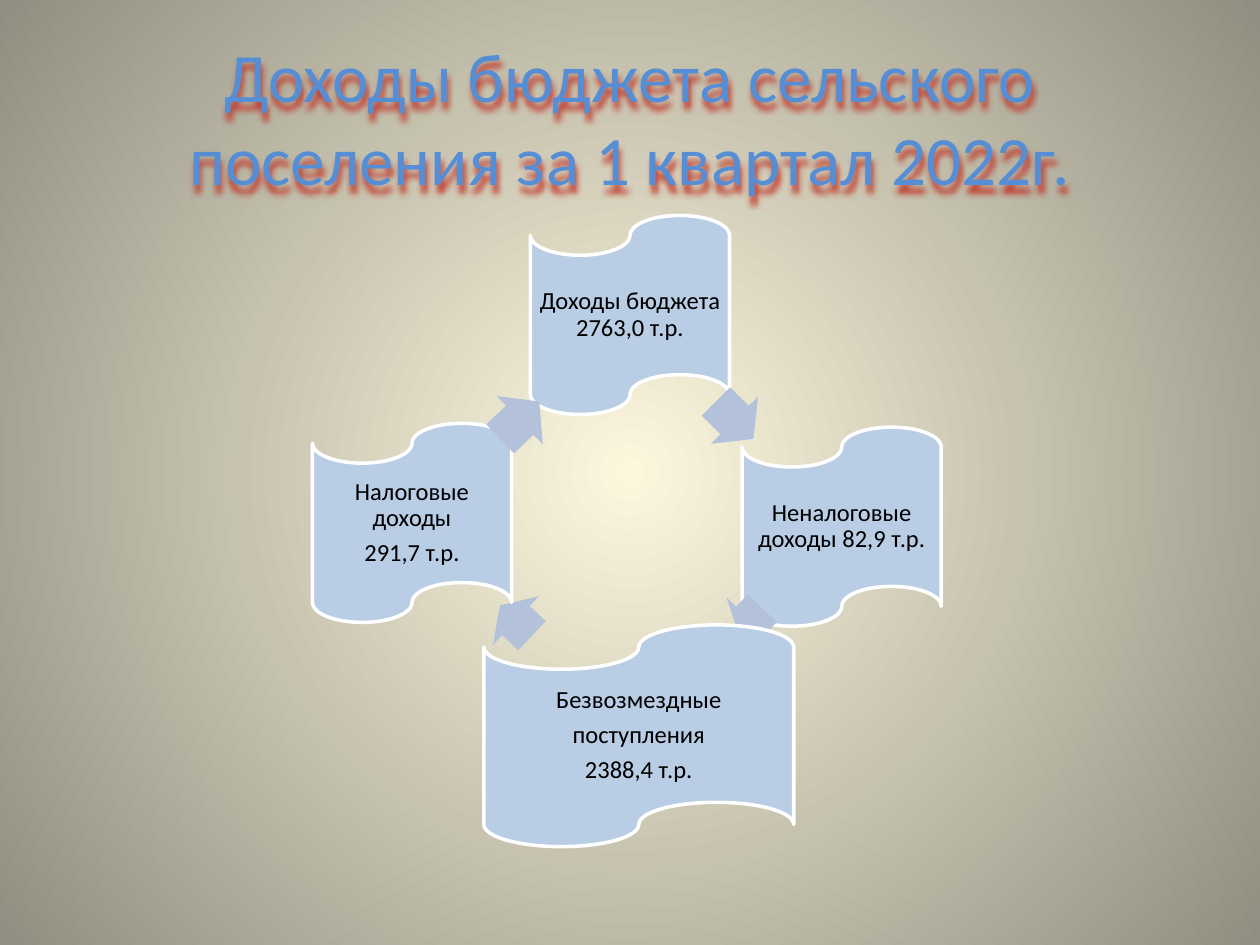
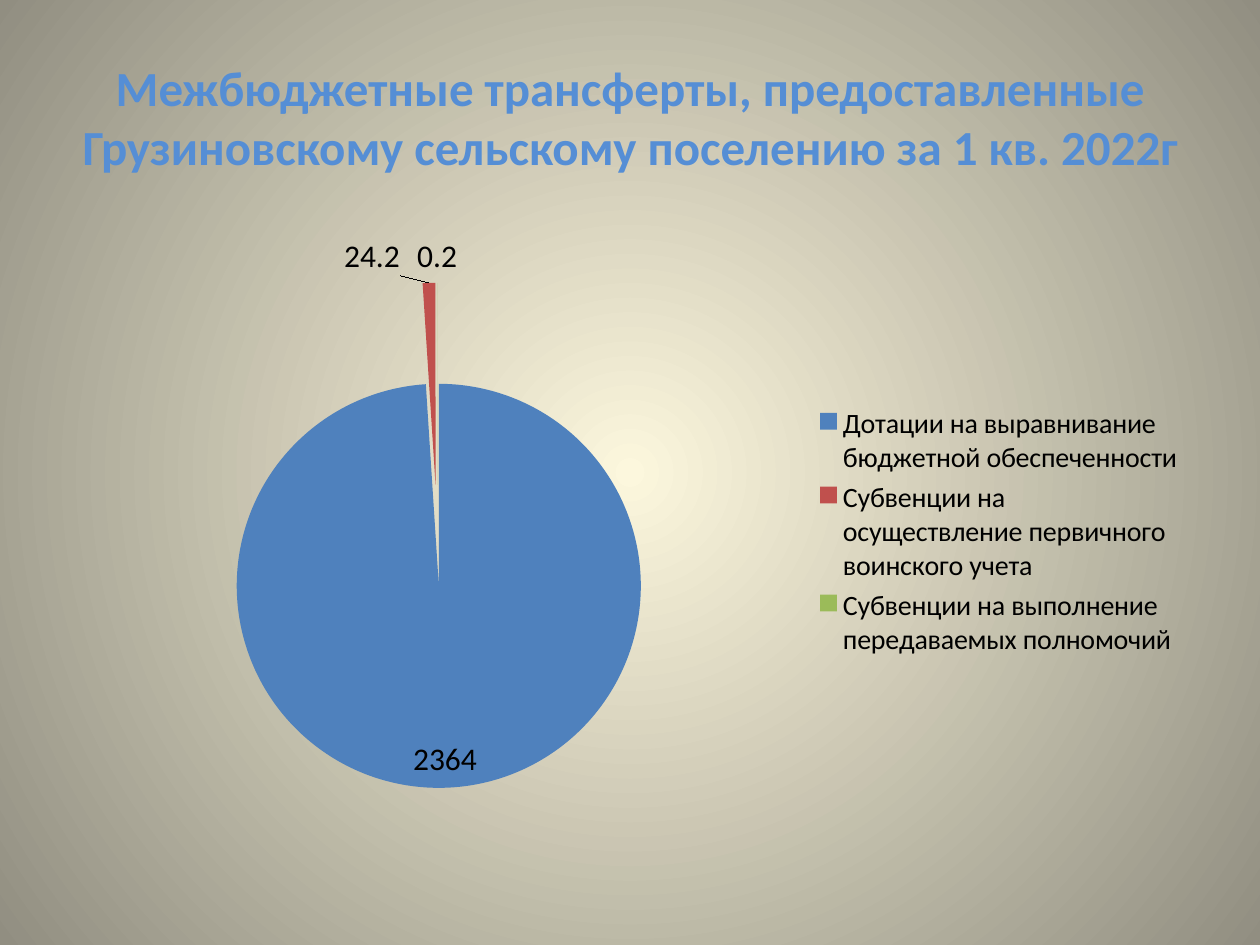
from dataclasses import dataclass

from pptx import Presentation
from pptx.chart.data import CategoryChartData
from pptx.dml.color import RGBColor
from pptx.enum.chart import XL_CHART_TYPE as ChartType
from pptx.enum.chart import XL_LABEL_POSITION as LabelPosition
from pptx.enum.chart import XL_LEGEND_POSITION as LegendPosition
from pptx.enum.shapes import MSO_SHAPE as Preset
from pptx.enum.text import MSO_ANCHOR as Anchor
from pptx.enum.text import MSO_AUTO_SIZE as AutoSize
from pptx.enum.text import PP_ALIGN as Align
from pptx.oxml import parse_xml
from pptx.oxml.ns import nsdecls, qn
from pptx.util import Pt

EMU_PER_PX = 9144
TITLE_ONLY = 5


@dataclass(frozen=True)
class Theme:
    font: str = "Calibri"
    glow_center: str = "FCF7DD"
    glow_edge: str = "918E81"
    title: str = "558ED5"
    title_shadow: str = "C0392B"
    text: str = "000000"
    tape: str = "B9CDE5"
    tape_line: str = "FFFFFF"
    arrow: str = "B3C1DB"
    slices: tuple = ("4F81BD", "C0504D", "9BBB59")
    title_size: float = 39.6
    long_title_size: float = 28
    tape_size: float = 14
    label_size: float = 18
    legend_size: float = 16


def px(value):
    return value * EMU_PER_PX


def rgb(value):
    return RGBColor.from_string(value)


def style_font(font, name, size, color, bold=False):
    font.name = name
    font.size = Pt(size)
    font.bold = bold
    font.color.rgb = rgb(color)


def write_text(frame, text, *, font, size, color, bold=False,
               line_spacing=None, space_after=None, inset=None):
    frame.word_wrap = True
    frame.auto_size = AutoSize.NONE
    frame.vertical_anchor = Anchor.MIDDLE
    if inset is not None:
        frame.margin_left = frame.margin_right = px(inset)
        frame.margin_top = frame.margin_bottom = px(inset)
    frame.text = text
    for paragraph in frame.paragraphs:
        paragraph.alignment = Align.CENTER
        paragraph.line_spacing = line_spacing
        paragraph.space_after = space_after
        for run in paragraph.runs:
            style_font(run.font, font, size, color, bold)


def manual_layout(**values):
    items = "".join(f'<c:{key} val="{value}"/>' for key, value in values.items())
    return parse_xml(f'<c:layout {nsdecls("c")}><c:manualLayout>{items}'
                     '</c:manualLayout></c:layout>')


class Deck:
    def __init__(self, theme):
        self.theme = theme
        self.presentation = Presentation()
        self.presentation.slide_width = px(1000)
        self.presentation.slide_height = px(750)
        self.slide = None
        self.paint_background()

    def paint_background(self):
        master = self.presentation.slide_master
        fill = master.background.fill
        fill.gradient()
        colors = (self.theme.glow_center, self.theme.glow_edge)
        for stop, color in zip(fill.gradient_stops, colors):
            stop.color.rgb = rgb(color)
        gradient = master.element.find(".//" + qn("p:bg")).find(".//" + qn("a:gradFill"))
        gradient.replace(gradient.find(qn("a:lin")), parse_xml(
            f'<a:path {nsdecls("a")} path="circle">'
            '<a:fillToRect l="50000" t="50000" r="50000" b="50000"/></a:path>'))

    def add_slide(self, title, size, bold=False, shadow=False):
        layout = self.presentation.slide_layouts[TITLE_ONLY]
        self.slide = self.presentation.slides.add_slide(layout)
        shape = self.slide.shapes.title
        shape.left, shape.top = px(50), px(30)
        shape.width, shape.height = px(900), px(125)
        write_text(shape.text_frame, title, font=self.theme.font, size=size,
                   color=self.theme.title, bold=bold)
        if shadow:
            shape.element.spPr.append(parse_xml(
                f'<a:effectLst {nsdecls("a")}>'
                '<a:outerShdw blurRad="50800" dist="50800" dir="5400000" rotWithShape="0">'
                f'<a:srgbClr val="{self.theme.title_shadow}"/>'
                '</a:outerShdw></a:effectLst>'))

    def shape(self, preset, box, fill):
        shape = self.slide.shapes.add_shape(preset, *map(px, box))
        shape.shadow.inherit = False
        shape.fill.solid()
        shape.fill.fore_color.rgb = rgb(fill)
        return shape

    def tape(self, box, text):
        shape = self.shape(Preset.FLOWCHART_PUNCHED_TAPE, box, self.theme.tape)
        shape.line.color.rgb = rgb(self.theme.tape_line)
        shape.line.width = Pt(2)
        write_text(shape.text_frame, text, font=self.theme.font,
                   size=self.theme.tape_size, color=self.theme.text,
                   line_spacing=0.9, space_after=Pt(4.9), inset=2)

    def arrow(self, box, rotation):
        shape = self.shape(Preset.RIGHT_ARROW, box, self.theme.arrow)
        shape.line.fill.background()
        shape.adjustments[0] = 0.6
        shape.adjustments[1] = 0.5
        shape.rotation = rotation

    def pie(self, box, name, values, explosion, label_shifts):
        data = CategoryChartData()
        data.categories = list(values)
        data.add_series(name, list(values.values()))
        chart = self.slide.shapes.add_chart(ChartType.PIE, *map(px, box), data).chart
        style_font(chart.font, self.theme.font, self.theme.label_size, self.theme.text)
        chart.has_title = False
        chart.has_legend = True
        chart.legend.position = LegendPosition.RIGHT
        chart.legend.include_in_layout = False
        style_font(chart.legend.font, self.theme.font, self.theme.legend_size,
                   self.theme.text)
        plot = chart.plots[0]
        plot.vary_by_categories = True

        plot_area = chart.element.find(".//" + qn("c:plotArea"))
        for layout in plot_area.findall(qn("c:layout")):
            plot_area.remove(layout)
        plot_area.insert(0, manual_layout(layoutTarget="inner", xMode="edge", yMode="edge",
                                          x=0.06, y=0.1, w=0.54, h=0.81))
        plot_area.find(".//" + qn("c:tx")).addnext(
            parse_xml(f'<c:explosion {nsdecls("c")} val="{explosion}"/>'))

        series = plot.series[0]
        for index, color in enumerate(self.theme.slices):
            fill = series.points[index].format.fill
            fill.solid()
            fill.fore_color.rgb = rgb(color)
        series.data_labels.show_value = True
        series.data_labels.position = LabelPosition.BEST_FIT
        for index, (x, y) in label_shifts.items():
            series.points[index].data_label.position = LabelPosition.BEST_FIT
            label = plot_area.find(".//" + qn("c:dLbl"))
            label.insert(1, manual_layout(x=x, y=y))

    def save(self):
        self.presentation.save("out.pptx")


def add_income_slide(deck):
    deck.add_slide("Доходы бюджета сельского поселения за 1 квартал 2022г.",
                   deck.theme.title_size, shadow=True)
    cycle = (
        ((421, 171, 158, 158), "Доходы бюджета 2763,0 т.р.",
         (562, 307, 42, 53), 45),
        ((589, 339, 158, 158), "Неналоговые доходы 82,9 т.р.",
         (582, 466, 27, 53), 134.1),
        ((384, 496, 246, 176), "Безвозмездные\nпоступления\n2388,4 т.р.",
         (392, 466, 35, 53), 223.3),
        ((248, 336, 158, 158), "Налоговые доходы\n291,7 т.р.",
         (391, 307, 43, 53), 316.4),
    )
    for tape_box, text, arrow_box, rotation in cycle:
        deck.tape(tape_box, text)
        deck.arrow(arrow_box, rotation)


def add_transfers_slide(deck):
    deck.add_slide("Межбюджетные трансферты, предоставленные "
                   "Грузиновскому сельскому поселению за 1 кв. 2022г",
                   deck.theme.long_title_size, bold=True)
    transfers = {
        "Дотации на выравнивание бюджетной обеспеченности": 2364,
        "Субвенции на осуществление первичного воинского учета": 24.2,
        "Субвенции на выполнение передаваемых полномочий": 0.2,
    }
    deck.pie((50, 175, 900, 495), "Series 1", transfers, explosion=25,
             label_shifts={1: (-0.05, 0)})


def main():
    deck = Deck(Theme())
    add_income_slide(deck)
    add_transfers_slide(deck)
    deck.save()


if __name__ == "__main__":
    main()
